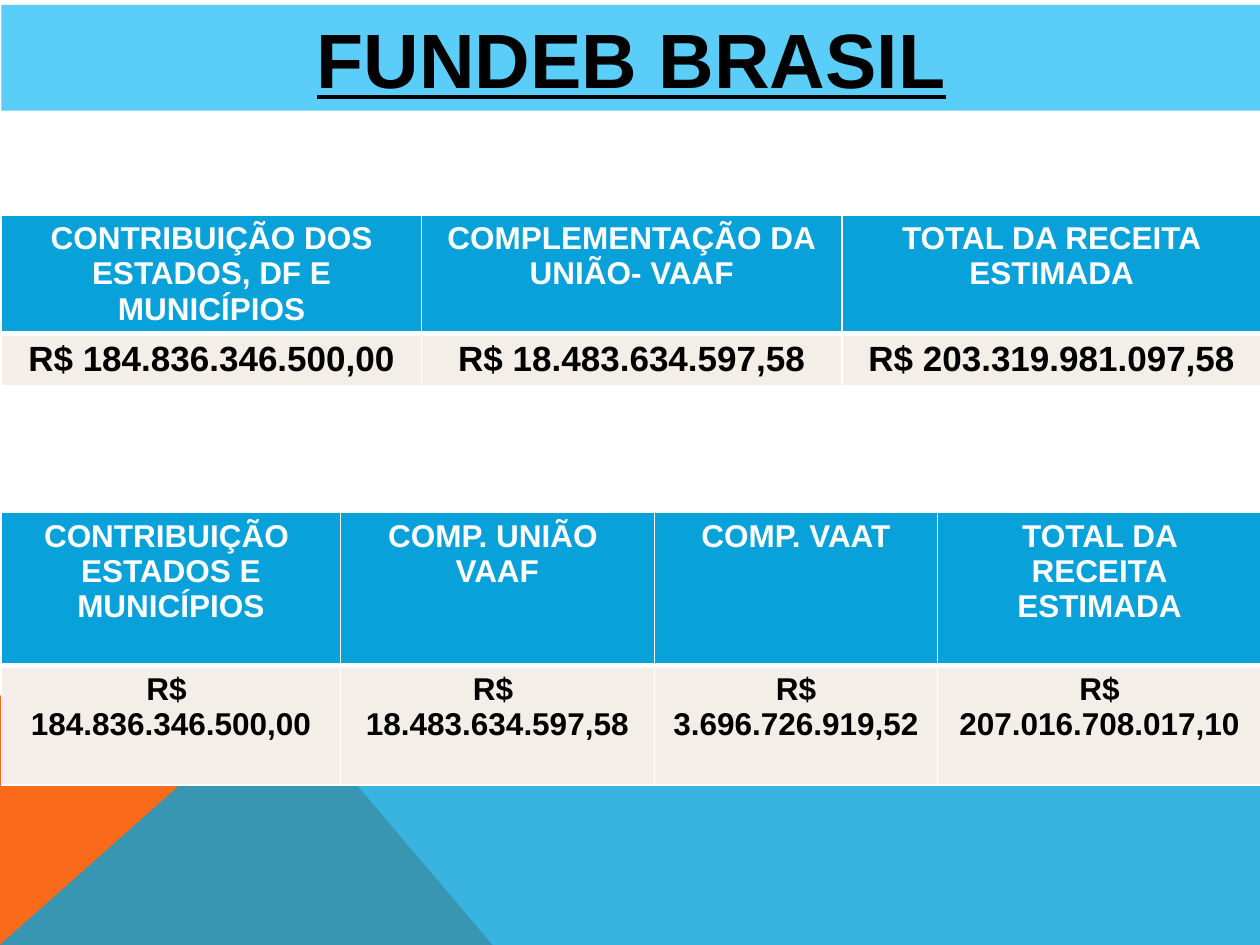
from lxml import etree
from pptx import Presentation
from pptx.dml.color import RGBColor
from pptx.enum import text
from pptx.oxml.ns import qn
from pptx.util import Cm, Pt

TITLE = "FUNDEB BRASIL"
# Each cell is a list of paragraphs; lengths are in centimetres.
TABLES = [
    dict(top=4.33, widths=[8.47, 8.47, 8.46], heights=[2.37, 1.05],
         sizes=["head", "amount"], rows=[
        [["CONTRIBUIÇÃO DOS", "ESTADOS, DF E MUNICÍPIOS"],
         ["COMPLEMENTAÇÃO DA", "UNIÃO- VAAF"],
         ["TOTAL DA RECEITA", "ESTIMADA"]],
        [["R$ 184.836.346.500,00"],
         ["R$ 18.483.634.597,58"],
         ["R$ 203.319.981.097,58"]],
    ]),
    dict(top=10.33, widths=[6.83, 6.33, 5.71, 6.53], heights=[3.09, 2.4],
         sizes=["head", "head"], rows=[
        [["CONTRIBUIÇÃO ", "ESTADOS E MUNICÍPIOS"],
         ["COMP. UNIÃO  VAAF"],
         ["COMP. VAAT"],
         ["TOTAL DA RECEITA", "ESTIMADA"]],
        [["R$ ", "184.836.346.500,00"],
         ["R$ ", "18.483.634.597,58"],
         ["R$ 3.696.726.919,52"],
         ["R$", "207.016.708.017,10"]],
    ]),
]
THEME = dict(
    font="Arial",
    colors=dict(blue="08A1D9", orange="F96A1B", sky="5ACEF9",
                sand="F3EFE8", white="FFFFFF", black="000000"),
    sizes=dict(title=44, head=18, amount=20),
)
W, H, LEFT = 25.4, 19.05, 0.03
HORIZON, PEAK, FOOT = 14.02, 5.66, 9.93
BANDS = [
    ("orange", 100, [(0, H), (0, HORIZON), (PEAK, HORIZON), (FOOT, H)]),
    ("blue", 80, [(0, H), (PEAK, HORIZON), (W, HORIZON), (W, H)]),
]


def color(name):
    return RGBColor.from_string(THEME["colors"][name])


def paint(fill, name):
    fill.solid()
    fill.fore_color.rgb = color(name)


def write(tf, lines, size, ink, **extra):
    """Fill a text frame with centred bold paragraphs."""
    fmt = dict(name=THEME["font"], size=Pt(THEME["sizes"][size]), bold=True, **extra)
    for i, line in enumerate(lines):
        p = tf.paragraphs[0] if i == 0 else tf.add_paragraph()
        p.alignment = text.PP_ALIGN.CENTER
        r = p.add_run()
        r.text = line
        for key, value in fmt.items():
            setattr(r.font, key, value)
        r.font.color.rgb = color(ink)


def add_band(slide, name, opacity, points):
    builder = slide.shapes.build_freeform(*map(Cm, points[0]))
    builder.add_line_segments([(Cm(x), Cm(y)) for x, y in points[1:]], close=True)
    sp = builder.convert_to_shape()
    sp.shadow.inherit = False
    sp.line.fill.background()
    paint(sp.fill, name)
    if opacity < 100:
        clr = sp.fill._xPr.find(".//" + qn("a:srgbClr"))
        etree.SubElement(clr, qn("a:alpha"), val=str(opacity * 1000))


def add_borders(cell, bottom):
    tc_pr = cell._tc.get_or_add_tcPr()
    for i, (side, width) in enumerate(dict(L=1, R=1, T=1, B=bottom).items()):
        ln = etree.Element(qn("a:ln" + side), w=str(Pt(width)))
        fill = etree.SubElement(ln, qn("a:solidFill"))
        etree.SubElement(fill, qn("a:srgbClr"), val=THEME["colors"]["white"])
        tc_pr.insert(i, ln)


def add_table(slide, top, widths, heights, sizes, rows):
    table = slide.shapes.add_table(
        len(rows), len(widths), Cm(LEFT), Cm(top),
        Cm(sum(widths)), Cm(sum(heights))).table
    for col, width in zip(table.columns, widths):
        col.width = Cm(width)
    for i, row in enumerate(rows):
        table.rows[i].height = Cm(heights[i])
        fill, ink, bottom = ("blue", "white", 3) if i == 0 else ("sand", "black", 1)
        for j, lines in enumerate(row):
            cell = table.cell(i, j)
            paint(cell.fill, fill)
            add_borders(cell, bottom)
            write(cell.text_frame, lines, sizes[i], ink)


def add_title(slide):
    sp = slide.shapes.title
    box = dict(left=LEFT, top=0.1, width=W, height=2.13)
    for key, value in box.items():
        setattr(sp, key, Cm(value))
    paint(sp.fill, "sky")
    tf = sp.text_frame
    tf.auto_size = text.MSO_AUTO_SIZE.NONE
    tf.vertical_anchor = text.MSO_ANCHOR.MIDDLE
    write(tf, [TITLE], "title", "black", underline=True)


def main():
    prs = Presentation()
    prs.slide_width, prs.slide_height = Cm(W), Cm(H)
    slide = prs.slides.add_slide(prs.slide_layouts[5])
    for band in BANDS:
        add_band(slide, *band)
    for table in TABLES:
        add_table(slide, **table)
    add_title(slide)
    prs.save("out.pptx")


if __name__ == "__main__":
    main()
